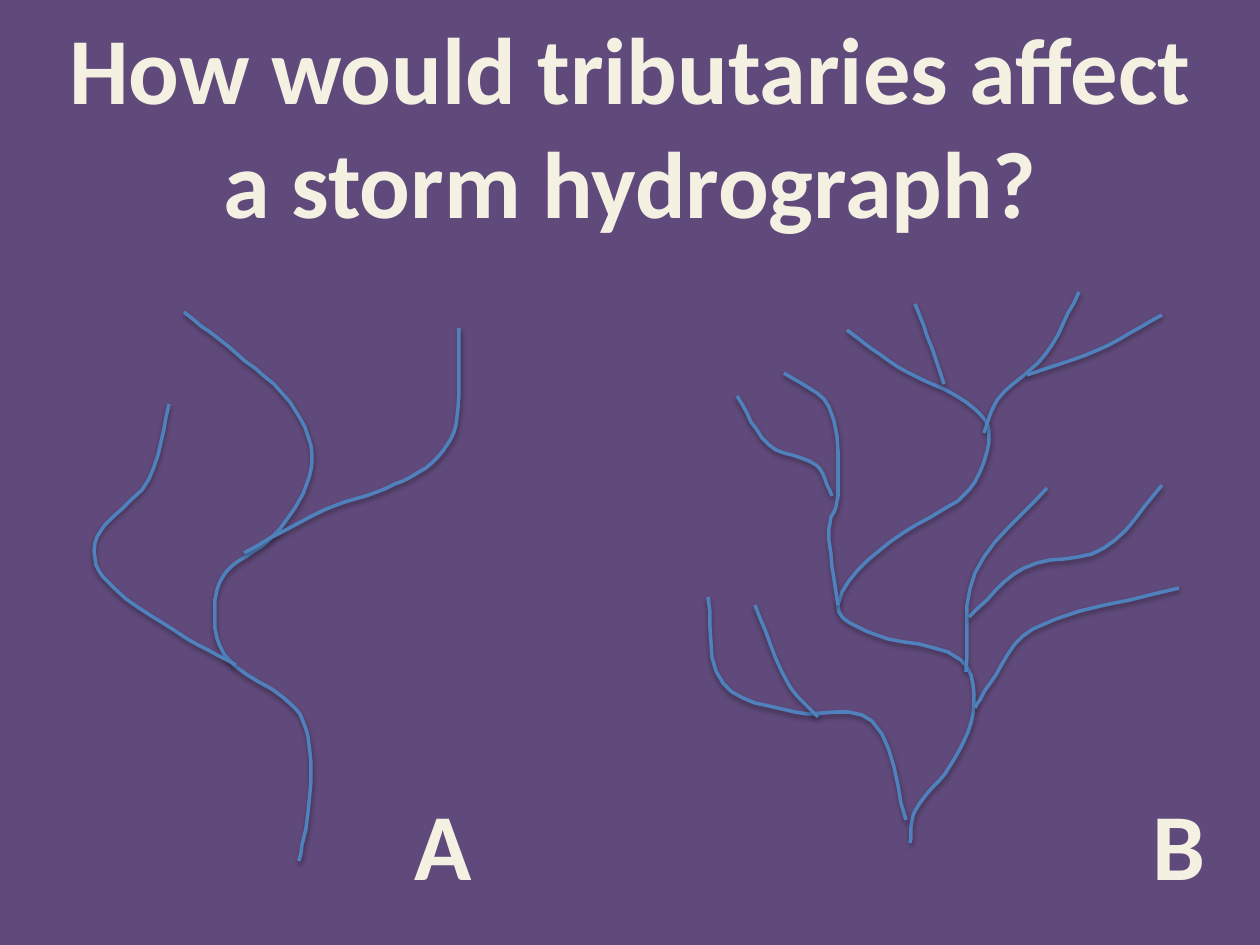
from lxml import etree
from pptx import Presentation, util as u
from pptx.dml.color import RGBColor
from pptx.enum import text as t
from pptx.oxml.ns import qn

PX = 914400 / 126
STEPS = 6
BACK, CREAM, BLUE = "604A7B", "F4F1E3", "4F81BD"
FONT = {"name": "Calibri", "size": u.Pt(54), "bold": True}
FRAME = {"word_wrap": False, "auto_size": t.MSO_AUTO_SIZE.SHAPE_TO_FIT_TEXT}

# Each stream runs from its source down to its mouth.
BASIN_A = [
    [(184, 312), (236, 353), (290, 402), (312, 454), (299, 501), (268, 541),
     (227, 571), (215, 600), (224, 654), (295, 708), (310, 752), (308, 813),
     (299, 861)],
    [(459, 328), (456, 425), (433, 462), (387, 488), (324, 510), (244, 553)],
    [(169, 404), (149, 479), (97, 537), (103, 577), (180, 634), (236, 665)],
]
BASIN_B = [
    [(847, 330), (898, 367), (966, 402), (989, 431), (969, 490), (890, 542),
     (838, 605), (874, 634), (961, 660), (973, 714), (950, 766), (915, 811),
     (910, 843)],
    [(1079, 292), (1045, 355), (998, 399), (984, 433)],
    [(784, 373), (829, 407), (838, 496), (829, 528), (838, 605)],
    [(1047, 488), (975, 573), (966, 672)],
    [(708, 597), (723, 683), (795, 712), (872, 721), (906, 820)],
    [(1162, 315), (1098, 350), (1027, 375)],
    [(915, 304), (932, 348), (944, 384)],
    [(1162, 485), (1104, 548), (1024, 568), (969, 617)],
    [(737, 396), (769, 445), (816, 465), (832, 496)],
    [(755, 605), (789, 685), (818, 717)],
    [(1179, 588), (1033, 629), (989, 685), (975, 708)],
]


def px(n):
    return round(n * PX)


def color(code):
    return RGBColor.from_string(code)


def apply(item, values):
    for name, value in values.items():
        setattr(item, name, value)


def smooth(points):
    """Return points along a Hermite curve through the given ones."""
    knots = [complex(*point) for point in points]
    ways = [b - a for a, b in zip(knots[:1] + knots, knots[1:] + knots[-1:])]
    ways = [b - a for a, b in zip(knots[:1] + knots[:-1],
                                  knots[1:] + knots[-1:])]
    ways = [way / abs(way) for way in ways]
    curve = knots[:1]
    for a, b, out, into in zip(knots, knots[1:], ways, ways[1:]):
        size = abs(b - a)
        for step in range(1, STEPS + 1):
            s = step / STEPS
            ease = s * s * (3 - 2 * s)
            bend = s * (1 - s) * ((1 - s) * out - s * into)
            curve.append(a + (b - a) * ease + size * bend)
    return [(spot.real, spot.imag) for spot in curve]


def shade(shape):
    """Give the shape a soft shadow straight below it."""
    shape.shadow.inherit = False
    effects = shape._element.spPr.find(qn("a:effectLst"))
    outer = etree.SubElement(effects, qn("a:outerShdw"), blurRad="40000",
                             dist="20000", dir="5400000", rotWithShape="0")
    black = etree.SubElement(outer, qn("a:srgbClr"), val="000000")
    etree.SubElement(black, qn("a:alpha"), val="38000")


def stream(slide, points):
    start, *rest = smooth(points)
    build = slide.shapes.build_freeform(*start, scale=PX)
    build.add_line_segments(rest, close=False)
    shape = build.convert_to_shape()
    shape.fill.background()
    shape.line.color.rgb = color(BLUE)
    shape.line.width = u.Pt(2)
    shade(shape)


def label(slide, lines, *box):
    frame = slide.shapes.add_textbox(*map(px, box)).text_frame
    apply(frame, FRAME)
    frame.text = "\n".join(lines)
    for para in frame.paragraphs:
        para.alignment = t.PP_ALIGN.CENTER
        for run in para.runs:
            apply(run.font, FONT)
            run.font.color.rgb = color(CREAM)


def main():
    deck = Presentation()
    apply(deck, {"slide_width": px(1260), "slide_height": px(945)})
    slide = deck.slides.add_slide(deck.slide_layouts[6])
    slide.background.fill.solid()
    slide.background.fill.fore_color.rgb = color(BACK)

    title = ["How would tributaries affect ", "a storm hydrograph?"]
    label(slide, title, 49, 4, 1163, 242)
    for points in BASIN_A + BASIN_B:
        stream(slide, points)
    label(slide, ["A"], 402, 780, 83, 127)
    label(slide, ["B"], 1139, 780, 79, 127)
    deck.save("out.pptx")


if __name__ == "__main__":
    main()
